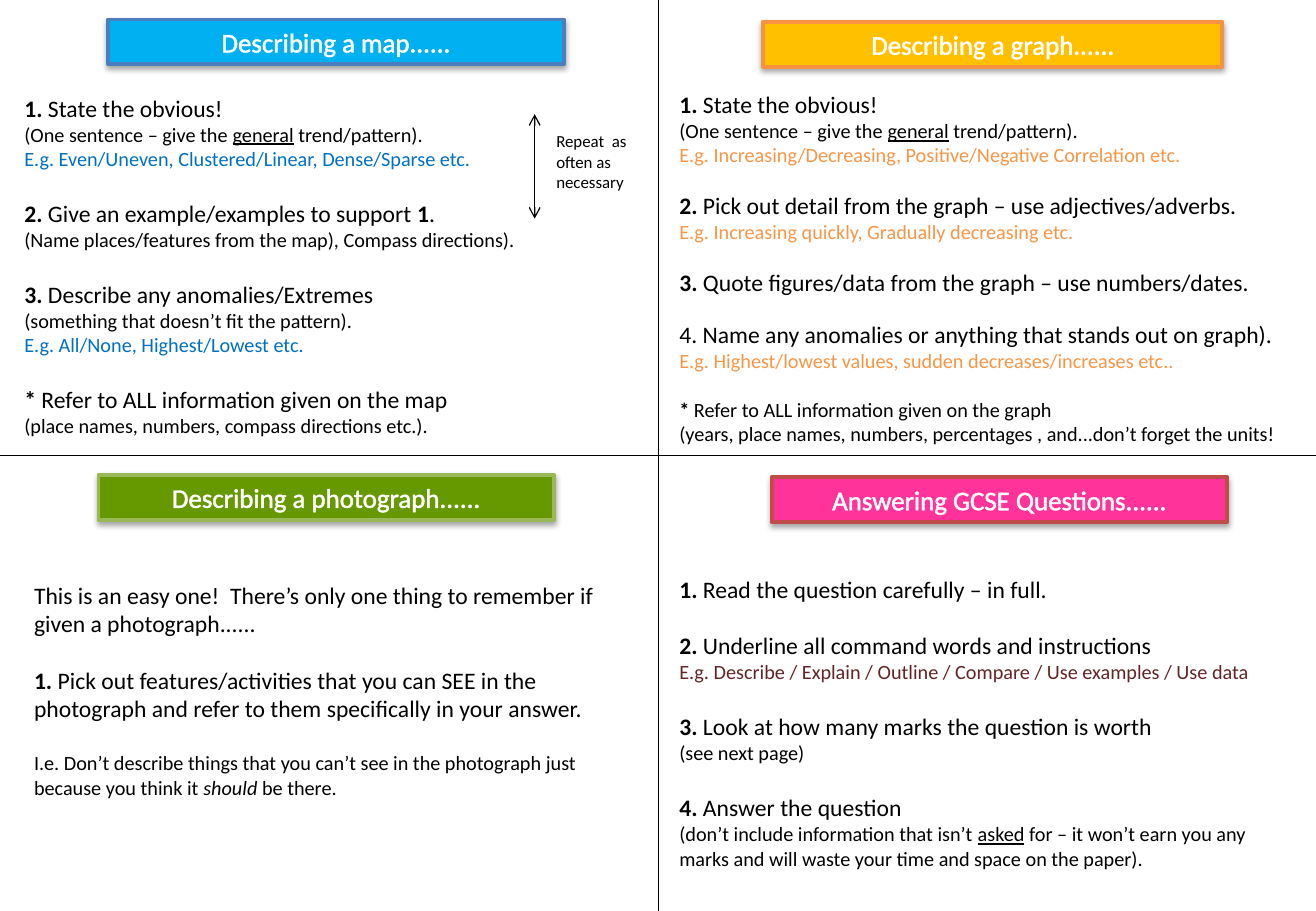
from pptx import Presentation
from pptx import oxml, util as u
from pptx.dml import color
from pptx.enum import shapes, text
from pptx.oxml import ns

COLOURS = {
    "ink": "000000", "white": "FFFFFF",
    "map": "00B0F0", "map edge": "4B7EBC", "map example": "0070C0",
    "graph": "FFC000", "graph edge": "F69240", "graph example": "F79646",
    "photo": "669900", "photo edge": "98B955",
    "exam": "FF3399", "exam edge": "BF4C48", "exam example": "632523",
}
KINDS = {
    "point": {"size": 14, "emphasis": "bold", "gap": True},
    "star": {"size": 12, "emphasis": "bold", "gap": True},
    "remark": {"size": 12, "emphasis": "italic", "gap": True},
    "note": {"size": 12, "emphasis": "underline", "gap": False},
    "example": {"size": 12, "emphasis": "bold", "gap": False},
}
PANELS = [
    {"topic": "map", "heading": "Describing a map......", "gap": 16.8,
     "banner": (0.89, 0.16, 3.75, 0.37), "body": (0.1, 0.72, 5.08, 3.03), "lines": [
         ("point", "|1.| State the obvious!"),
         ("note", "(One sentence – give the |general| trend/pattern)."),
         ("example", "E.g. Even/Uneven, Clustered/Linear, Dense/Sparse etc."),
         ("point", "|2.| Give an example/examples to support |1|."),
         ("note", "(Name places/features from the map), Compass directions)."),
         ("point", "|3.| Describe any anomalies/Extremes"),
         ("note", "(something that doesn’t fit the pattern)."),
         ("example", "E.g. All/None, Highest/Lowest etc."),
         ("point", "|* |Refer to ALL information given on the map"),
         ("note", "(place names, numbers, compass directions etc.)."),
     ]},
    {"topic": "graph", "heading": "Describing a graph......", "gap": 14.3,
     "banner": (6.28, 0.18, 3.78, 0.37), "body": (5.49, 0.69, 5.16, 3.06), "lines": [
         ("point", "|1.| State the obvious!"),
         ("note", "(One sentence – give the |general| trend/pattern)."),
         ("example", "E.g. Increasing/Decreasing, Positive/Negative Correlation etc."),
         ("point", "|2.| Pick out detail from the graph – use adjectives/adverbs."),
         ("example", "E.g. Increasing quickly, Gradually decreasing etc."),
         ("point", "|3.| Quote figures/data from the graph – use numbers/dates."),
         ("point", "4. Name any anomalies or anything that stands out on graph)."),
         ("example", "E.g. Highest/lowest values, sudden decreases/increases etc.."),
         ("star", "|* |Refer to ALL information given on the graph"),
         ("note", "(years, place names, numbers, percentages , and...don’t forget the units!"),
     ]},
    {"topic": "photo", "heading": "Describing a photograph......", "gap": 16.8,
     "banner": (0.81, 3.91, 3.75, 0.37), "body": (0.18, 4.73, 5.08, 1.92), "lines": [
         ("point", "This is an easy one!  There’s only one thing to remember if "
                   "given a photograph......"),
         ("point", "|1.| Pick out features/activities that you can SEE in the "
                   "photograph and refer to them specifically in your answer."),
         ("remark", "I.e. Don’t describe things that you can’t see in the photograph just "
                    "because you think it |should| be there."),
     ]},
    {"topic": "exam", "heading": "Answering GCSE Questions......", "gap": 16.8,
     "banner": (6.35, 3.93, 3.75, 0.37), "body": (5.49, 4.68, 5, 2.56), "lines": [
         ("point", "|1.| Read the question carefully – in full."),
         ("point", "|2.| Underline all command words and instructions"),
         ("example", "E.g. Describe / Explain / Outline / Compare / Use examples / Use data"),
         ("point", "|3.| Look at how many marks the question is worth"),
         ("note", "(see next page)"),
         ("point", "|4.| Answer the question"),
         ("note", "(don’t include information that isn’t |asked| for – it won’t earn you any "
                  "marks and will waste your time and space on the paper)."),
     ]},
]


def rgb(name):
    return color.RGBColor.from_string(COLOURS[name])


def xml(tag, attributes="", content=""):
    return oxml.parse_xml(f"<a:{tag} {ns.nsdecls('a')} {attributes}>{content}</a:{tag}>")


class RevisionSlide:
    """Draws the elements of a four-panel revision slide in one style."""

    font = "Calibri"

    def __init__(self, presentation):
        self.slide = presentation.slides.add_slide(presentation.slide_layouts[4])

    def place(self, shape, box):
        shape.left, shape.top, shape.width, shape.height = map(u.Inches, box)

    def style_frame(self, frame):
        frame.word_wrap = True
        frame.auto_size = text.MSO_AUTO_SIZE.NONE
        frame.vertical_anchor = text.MSO_ANCHOR.TOP

    def style_run(self, run, size, colour):
        run.font.name = self.font
        run.font.size = u.Pt(size)
        run.font.color.rgb = rgb(colour)
        run.font.bold = False

    def banner(self, shape, topic, heading):
        shape.fill.solid()
        shape.fill.fore_color.rgb = rgb(topic)
        shape.line.color.rgb = rgb(f"{topic} edge")
        shape.line.width = u.Pt(2.25)
        shape.element.spPr.append(xml("effectLst", content=(
            '<a:outerShdw blurRad="40000" dist="23000" dir="5400000" rotWithShape="0">'
            '<a:srgbClr val="000000"><a:alpha val="35000"/></a:srgbClr></a:outerShdw>')))
        frame = shape.text_frame
        frame.text = heading
        self.style_frame(frame)
        paragraph = frame.paragraphs[0]
        paragraph.alignment = text.PP_ALIGN.CENTER
        run = paragraph.runs[0]
        self.style_run(run, 16, "white")
        run.font._element.insert(0, xml("ln", 'w="18415"', (
            f'<a:solidFill><a:srgbClr val="{COLOURS["white"]}"/></a:solidFill>')))

    def title(self, box, topic, heading):
        shape = self.slide.shapes.title
        self.place(shape, box)
        self.banner(shape, topic, heading)

    def heading(self, box, topic, heading):
        shape = self.slide.shapes.add_shape(shapes.MSO_SHAPE.RECTANGLE, *map(u.Inches, box))
        self.banner(shape, topic, heading)

    def body(self, index, box, topic, lines, gap):
        shape = self.slide.placeholders[index]
        self.place(shape, box)
        frame = shape.text_frame
        self.style_frame(frame)
        for number, (kind, wording) in enumerate(lines):
            paragraph = frame.add_paragraph() if number else frame.paragraphs[0]
            style = KINDS[kind]
            paragraph.space_before = u.Pt(gap if number and style["gap"] else 0)
            properties = paragraph._p.get_or_add_pPr()
            properties.set("marL", "0")
            properties.set("indent", "0")
            properties.append(xml("buNone"))
            colour = f"{topic} example" if kind == "example" else "ink"
            for position, part in enumerate(wording.split("|")):
                if part:
                    run = paragraph.add_run()
                    run.text = part
                    self.style_run(run, style["size"], colour)
                    if position % 2:
                        setattr(run.font, style["emphasis"], True)

    def caption(self, box, wording):
        frame = self.slide.shapes.add_textbox(*map(u.Inches, box)).text_frame
        frame.text = wording
        self.style_frame(frame)
        self.style_run(frame.paragraphs[0].runs[0], 10, "ink")

    def line(self, *ends, arrows=False):
        connector = self.slide.shapes.add_connector(
            shapes.MSO_CONNECTOR.STRAIGHT, *map(u.Inches, ends))
        connector.line.color.rgb = rgb("ink")
        connector.line.width = u.Pt(0.75)
        properties = connector.element.spPr
        properties.append(xml("effectLst"))
        if arrows:
            for end in ("headEnd", "tailEnd"):
                properties.find(ns.qn("a:ln")).append(xml(end, 'type="arrow"'))


def main():
    presentation = Presentation()
    presentation.slide_width, presentation.slide_height = u.Inches(10.83), u.Inches(7.5)
    page = RevisionSlide(presentation)
    page.line(5.42, 0, 5.42, 7.5)
    page.line(0, 3.75, 10.83, 3.75)
    for index, panel in enumerate(PANELS, start=1):
        draw_banner = page.title if index == 1 else page.heading
        draw_banner(panel["banner"], panel["topic"], panel["heading"])
        page.body(index, panel["body"], panel["topic"], panel["lines"], panel["gap"])
    page.line(4.4, 0.94, 4.4, 1.8, arrows=True)
    page.caption((4.48, 1.03, 0.94, 0.61), "Repeat  as often as necessary")
    presentation.save("out.pptx")


if __name__ == "__main__":
    main()
